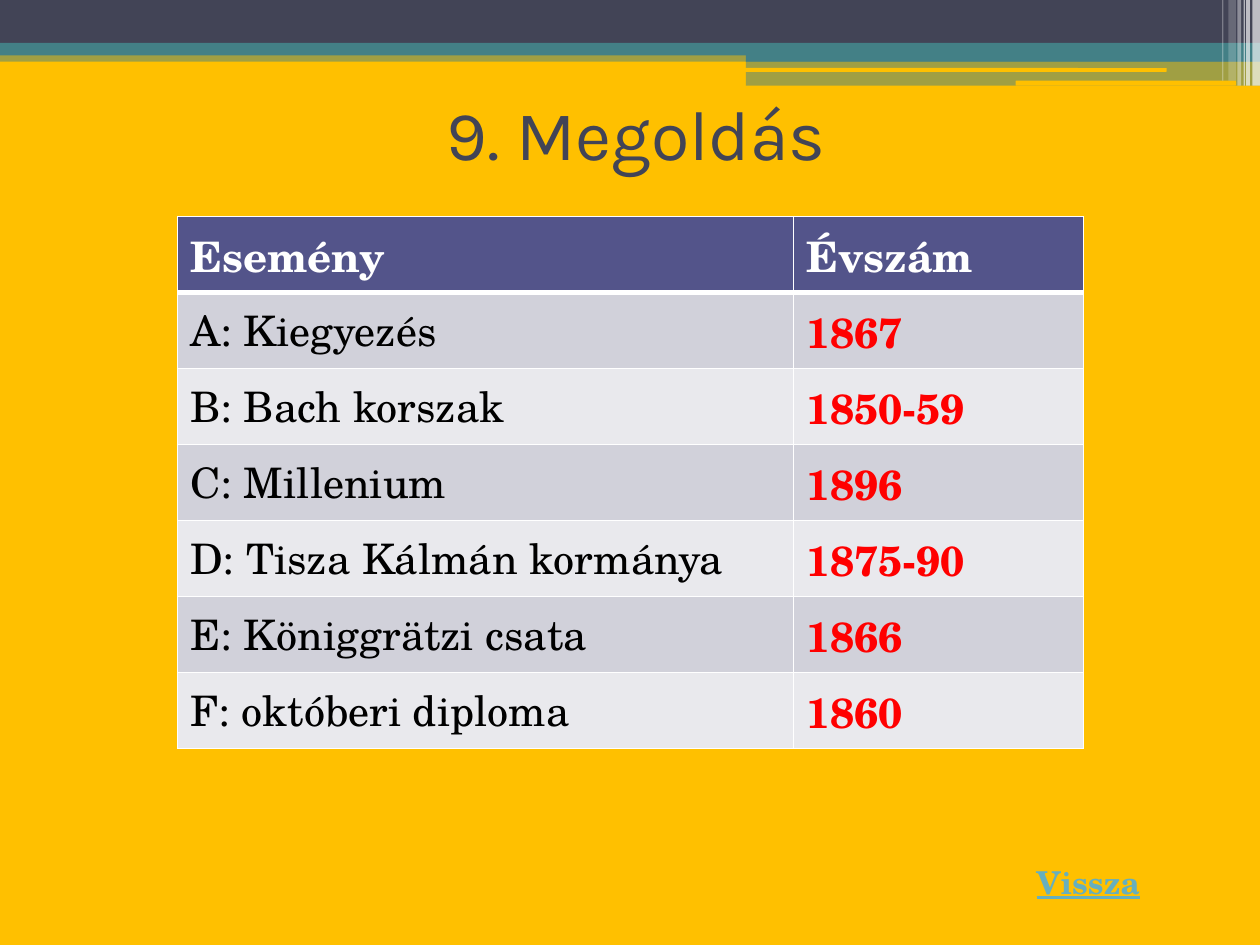
from dataclasses import dataclass

from lxml import etree
from pptx import Presentation, util as u
from pptx.dml.color import RGBColor
from pptx.enum import shapes, text
from pptx.oxml import ns

AMBER = RGBColor(0xFF, 0xC0, 0x00)
SLATE = RGBColor(0x42, 0x44, 0x56)
TEAL = RGBColor(0x43, 0x80, 0x86)
LINK = RGBColor(0x67, 0xAF, 0xBD)
INDIGO = RGBColor(0x53, 0x54, 0x8A)
BANDS = (RGBColor(0xD1, 0xD1, 0xDA), RGBColor(0xE9, 0xE9, 0xED))
WHITE = RGBColor(0xFF, 0xFF, 0xFF)
BLACK = RGBColor(0x00, 0x00, 0x00)
RED = RGBColor(0xFF, 0x00, 0x00)
HEADING, BODY = "Karla", "TeX Gyre Schola"
COLUMNS, ROWS = 10, 7.5

EVENTS = [
    ("Esemény", "Évszám"),
    ("A: Kiegyezés", "1867"),
    ("B: Bach korszak", "1850-59"),
    ("C: Millenium", "1896"),
    ("D: Tisza Kálmán kormánya", "1875-90"),
    ("E: Königgrätzi csata", "1866"),
    ("F: októberi diploma", "1860"),
]


@dataclass
class Box:
    """An area of the slide, measured in EMU."""
    left: int
    top: int
    width: int
    height: int

    def inner(self, column, row, columns, rows, unit):
        """Return an inner box, placed in grid units from this box's corner."""
        return Box(self.left + int(column * unit), self.top + int(row * unit),
                   int(columns * unit), int(rows * unit))

    def edges(self):
        return self.left, self.top, self.width, self.height


def style_text(para, font, size, color, bold=False, underline=False):
    for span in para.runs:
        span.font.name = font
        span.font.size = u.Pt(size)
        span.font.color.rgb = color
        span.font.bold = bold
        span.font.underline = underline


def add_bar(page, box, color, opacity=100, kind=shapes.MSO_SHAPE.RECTANGLE):
    bar = page.shapes.add_shape(kind, *box.edges())
    bar.shadow.inherit = False
    bar.fill.solid()
    bar.fill.fore_color.rgb = color
    bar.line.fill.background()
    if opacity < 100:
        tint = bar.element.spPr.find(".//" + ns.qn("a:srgbClr"))
        etree.SubElement(tint, ns.qn("a:alpha"), val=str(opacity * 1000))


def add_header(page, box, unit):
    """Draw the bands across the top, the two slots and the right-hand stripes."""
    step = 5.92
    for column, row, height, color, opacity in (
            (0, 0.4, 0.09, TEAL, 50), (0, 0, 0.34, SLATE, 100), (0, 0.34, 0.1, TEAL, 100),
            (step, 0.39, 0.1, TEAL, 100), (step, 0.48, 0.2, TEAL, 50)):
        add_bar(page, box.inner(column, row, COLUMNS - column, height, unit), color, opacity)

    for column, row, width, height in ((5.91, 0.54, 3.35, 0.03), (8.06, 0.64, 1.75, 0.04)):
        add_bar(page, box.inner(column, row, width, height, unit), AMBER,
                kind=shapes.MSO_SHAPE.ROUNDED_RECTANGLE)

    for column, width, height, opacity in (
            (9.94, 0.06, 0.68, 65), (9.89, 0.03, 0.68, 65), (9.87, 0.01, 0.68, 60),
            (9.82, 0.03, 0.68, 40), (9.75, 0.06, 0.64, 20), (9.7, 0.01, 0.64, 30)):
        add_bar(page, box.inner(column, 0, width, height, unit), WHITE, opacity)


def add_title(page, box):
    title = page.shapes.title
    title.left, title.top, title.width, title.height = box.edges()
    frame = title.text_frame
    frame.text = "9. Megoldás"
    frame.vertical_anchor = text.MSO_ANCHOR.MIDDLE
    para = frame.paragraphs[0]
    para.alignment = text.PP_ALIGN.CENTER
    style_text(para, HEADING, 40, SLATE)


def border_cell(cell, top, bottom):
    """Give a cell white borders, 1 pt wide at the sides."""
    properties = cell._tc.get_or_add_tcPr()
    for place, (side, width) in enumerate((("L", 1), ("R", 1), ("T", top), ("B", bottom))):
        line = etree.Element(ns.qn("a:ln" + side), w=str(u.Pt(width)))
        fill = etree.SubElement(line, ns.qn("a:solidFill"))
        etree.SubElement(fill, ns.qn("a:srgbClr"), val=str(WHITE))
        properties.insert(place, line)


def add_events(page, box):
    table = page.shapes.add_table(len(EVENTS), 2, *box.edges()).table
    for column, share in zip(table.columns, (0.68, 0.32)):
        column.width = int(box.width * share)
    for index, record in enumerate(EVENTS):
        is_header = index == 0
        colors = (WHITE, WHITE) if is_header else (BLACK, RED)
        for position, (words, color) in enumerate(zip(record, colors)):
            cell = table.cell(index, position)
            cell.text = words
            cell.fill.solid()
            cell.fill.fore_color.rgb = INDIGO if is_header else BANDS[(index - 1) % 2]
            style_text(cell.text_frame.paragraphs[0], BODY, 24, color,
                       bold=is_header or position == 1)
            border_cell(cell, top=3 if index == 1 else 1, bottom=3 if is_header else 1)


def add_back_label(page, box):
    frame = page.shapes.add_textbox(*box.edges()).text_frame
    frame.word_wrap = False
    frame.auto_size = text.MSO_AUTO_SIZE.SHAPE_TO_FIT_TEXT
    frame.text = "Vissza"
    style_text(frame.paragraphs[0], BODY, 18, LINK, bold=True, underline=True)


def main():
    deck = Presentation()
    deck.slide_width, deck.slide_height = u.Inches(COLUMNS), u.Inches(ROWS)
    unit = deck.slide_width / COLUMNS
    page = deck.slides.add_slide(deck.slide_layouts[5])
    page.background.fill.solid()
    page.background.fill.fore_color.rgb = AMBER

    area = Box(0, 0, deck.slide_width, deck.slide_height)
    add_header(page, area, unit)
    add_title(page, area.inner(0.55, 0.47, 9, 1.17, unit))
    add_back_label(page, area.inner(8.13, 6.8, 1.03, 0.4, unit))
    add_events(page, area.inner(1.41, 1.72, 7.19, 4.22, unit))
    deck.save("out.pptx")


if __name__ == "__main__":
    main()
